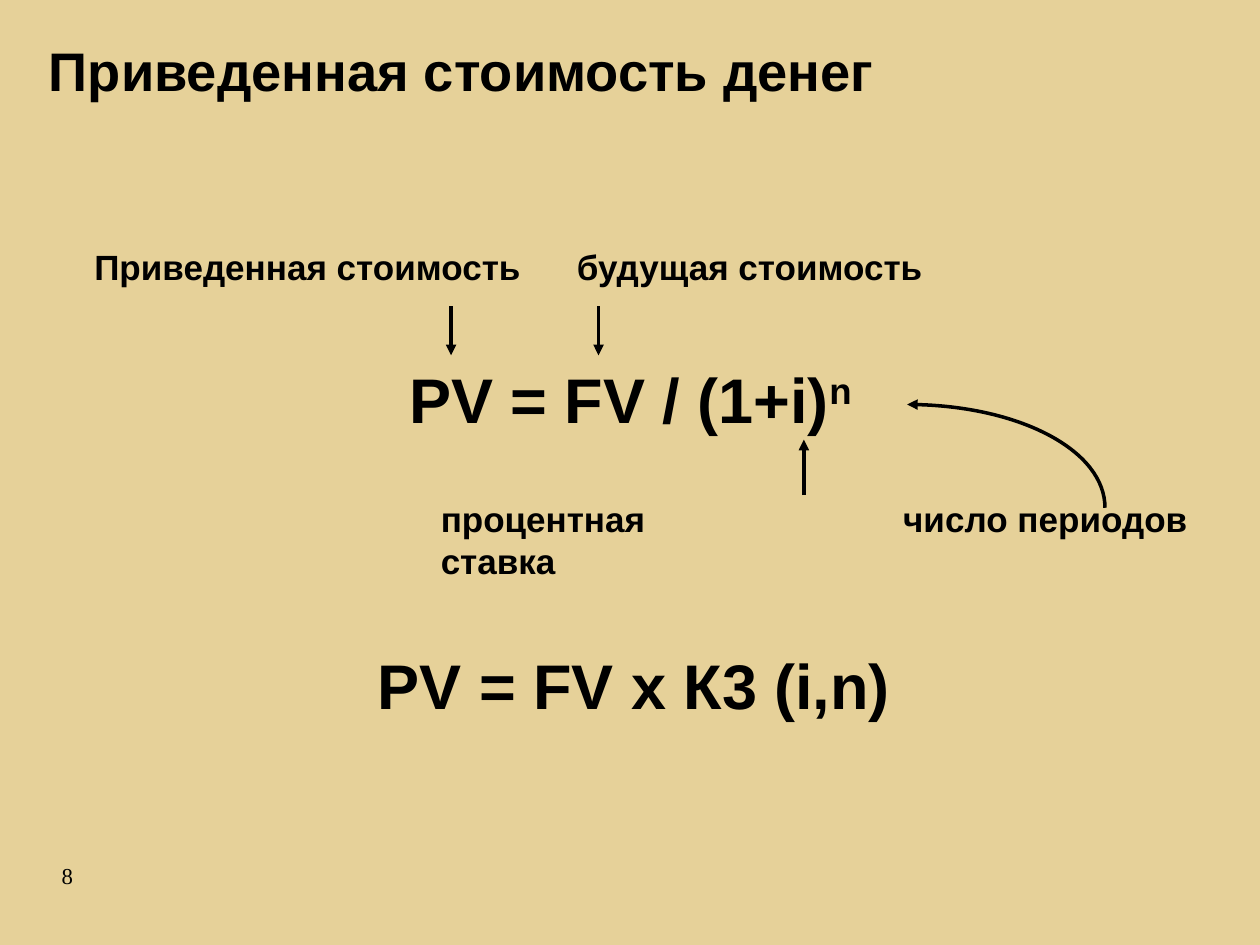
"""Build the slide on the present value of money."""
from lxml.etree import SubElement as Sub
from pptx import Presentation
from pptx.dml.color import RGBColor
from pptx.enum.shapes import MSO_CONNECTOR as Link
from pptx.oxml.ns import qn
from pptx.util import Inches, Pt

SAND = RGBColor(0xE6, 0xD1, 0x99)
BLACK = RGBColor(0, 0, 0)

NUMBER = ("8", 0.39, 6.79, 0.41, 0.32)
TITLE = ("Приведенная стоимость денег", 0.29, 0.25, 9.58, 0.61)
POWER = ("PV = FV / (1+i)", 3.15, 2.81, 3.73, 0.7)
FACTOR = ("PV = FV x К3 (i,n)", 2.9, 5.08, 4.27, 0.7)
TOP, LOW = 1.9, 3.9
LABELS = [
    ("Приведенная стоимость", 0.65, TOP, 3.59, False),
    ("будущая стоимость", 4.48, TOP, 2.95, False),
    ("процентная ставка", 3.4, LOW, 2.8, True),
    ("число периодов", 7.07, LOW, 2.46, False),
]
ARROWS = [(3.58, 2.43, 2.82), (4.75, 2.43, 2.82), (6.38, 3.93, 3.49)]
CURVE = [(7.2, 3.21), (8.07, 3.21), (8.77, 3.58), (8.77, 4.03)]


def style(run, size, font="Arial", bold=True):
    run.font.size = Pt(size)
    run.font.name = font
    run.font.bold = bold
    run.font.color.rgb = BLACK


def add_text(slide, item, size, wrap=False, font="Arial", bold=True):
    text, *place = item
    box = slide.shapes.add_textbox(*map(Inches, place))
    box.text_frame.word_wrap = wrap
    par = box.text_frame.paragraphs[0]
    par.text = text
    style(par.runs[0], size, font, bold)
    return par


def ink(shape, end):
    shape.line.color.rgb = BLACK
    shape.line.width = Pt(2)
    Sub(shape.line._get_or_add_ln(), qn(f"a:{end}"), type="triangle")


def add_arrow(slide, x, start, stop):
    ends = map(Inches, (x, start, x, stop))
    arrow = slide.shapes.add_connector(Link.STRAIGHT, *ends)
    ink(arrow, "tailEnd")
    Sub(arrow._element.spPr, qn("a:effectLst"))


def add_curve(slide, points):
    first, *rest = [(Inches(x), Inches(y)) for x, y in points]
    form = slide.shapes.build_freeform(*first)
    form.add_line_segments(rest, close=False)
    curve = form.convert_to_shape()
    track = curve._element.spPr.find(".//" + qn("a:path"))
    bend = Sub(track, qn("a:cubicBezTo"))
    for step in track.findall(qn("a:lnTo")):
        bend.append(step[0])
        track.remove(step)
    curve.fill.background()
    curve.shadow.inherit = False
    ink(curve, "headEnd")


def main():
    deck = Presentation()
    deck.slide_width, deck.slide_height = Inches(10), Inches(7.5)
    slide = deck.slides.add_slide(deck.slide_layouts[6])
    slide.background.fill.solid()
    slide.background.fill.fore_color.rgb = SAND

    add_text(slide, NUMBER, 13, font="Times New Roman", bold=False)
    power = add_text(slide, POWER, 36).add_run()
    power.text = "n"
    style(power, 36)
    power.font._element.set("baseline", "30000")
    for *label, wrap in LABELS:
        add_text(slide, (*label, 0.43), 20, wrap)
    for arrow in ARROWS:
        add_arrow(slide, *arrow)
    add_curve(slide, CURVE)
    add_text(slide, TITLE, 31, True)
    add_text(slide, FACTOR, 36, True)
    deck.save("out.pptx")


if __name__ == "__main__":
    main()
